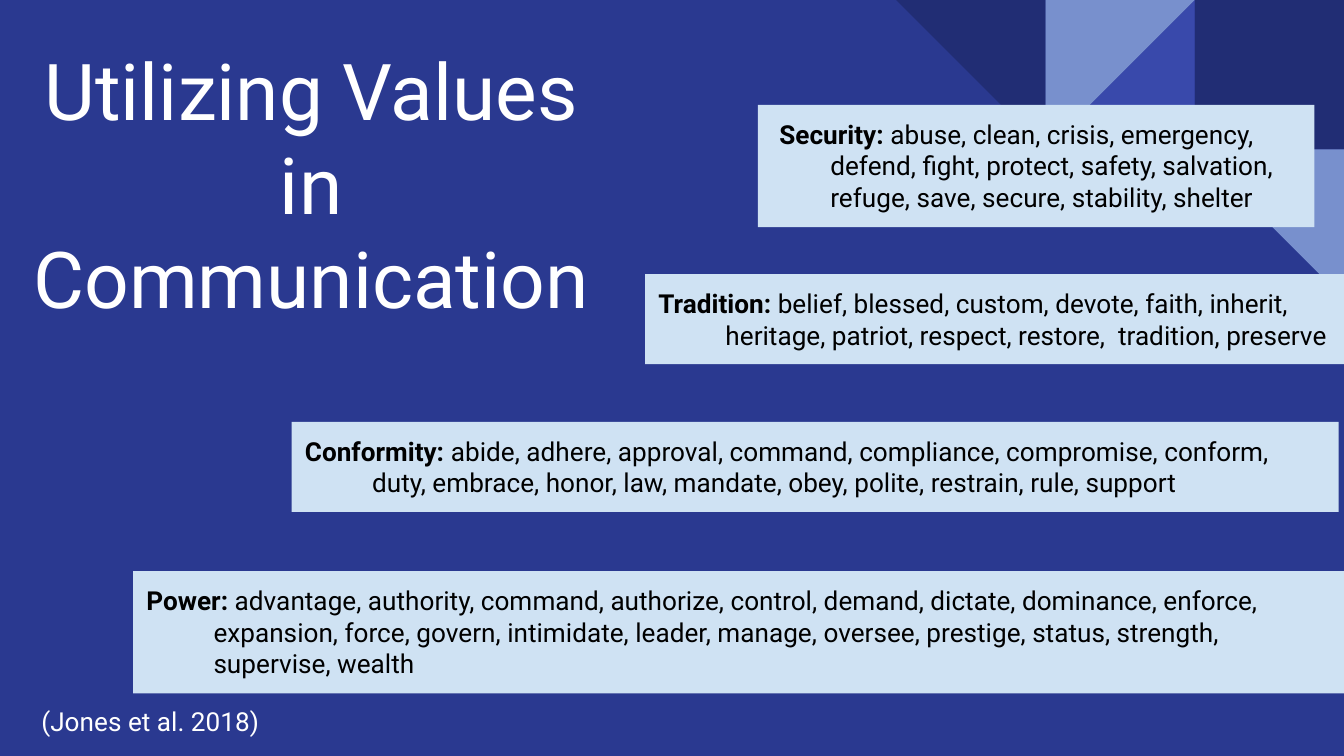
import dataclasses

import pptx
import pptx.dml.color
import pptx.enum.shapes
import pptx.enum.text
import pptx.oxml.ns
import pptx.util

Inches = pptx.util.Inches
SHAPE = pptx.enum.shapes.MSO_SHAPE
ANCHOR = pptx.enum.text.MSO_ANCHOR
ALIGN = pptx.enum.text.PP_ALIGN


@dataclasses.dataclass(frozen=True)
class Theme:
    font: str = "Roboto"
    title_size: int = 42
    body_size: int = 14
    background: str = "2A3990"
    navy: str = "212D74"
    indigo: str = "3949AB"
    periwinkle: str = "7890CD"
    panel: str = "CFE2F3"
    dark_text: str = "000000"
    light_text: str = "FFFFFF"


THEME = Theme()
SLIDE_WIDTH = 10
SLIDE_HEIGHT = SLIDE_WIDTH * 9 / 16
TILE = SLIDE_WIDTH / 9

CORNER_TILES = [
    (8, 0, SHAPE.RECTANGLE, 0, False, THEME.navy),
    (7, 0, SHAPE.RIGHT_TRIANGLE, 0, True, THEME.indigo),
    (7, 0, SHAPE.RIGHT_TRIANGLE, 180, True, THEME.periwinkle),
    (6, 0, SHAPE.RIGHT_TRIANGLE, 180, False, THEME.navy),
    (8, 1, SHAPE.RIGHT_TRIANGLE, 180, False, THEME.periwinkle),
]

VALUE_PANELS = [
    ((5.64, 0.78, 4.14, 0.91), 0.44, 0.38, "Security: ",
     "abuse, clean, crisis, emergency, defend, fight, protect, safety, "
     "salvation, refuge, save, secure, stability, shelter"),
    ((4.8, 2.04, 5.2, 0.67), 0.5, 0.5, "Tradition:",
     " belief, blessed, custom, devote, faith, inherit, heritage, patriot, "
     "respect, restore,  tradition, preserve"),
    ((2.17, 3.14, 7.79, 0.67), 0.5, 0.5, "Conformity: ",
     "abide, adhere, approval, command, compliance, compromise, conform, "
     "duty, embrace, honor, law, mandate, obey, polite, restrain, rule, support"),
    ((0.99, 4.25, 9.01, 0.91), 0.5, 0.5, "Power:",
     " advantage, authority, command, authorize, control, demand, dictate, "
     "dominance, enforce, expansion, force, govern, intimidate, leader, manage, "
     "oversee, prestige, status, strength, supervise, wealth"),
]


def rgb(value):
    return pptx.dml.color.RGBColor.from_string(value)


def add_block(slide, kind, box, color):
    block = slide.shapes.add_shape(kind, *map(Inches, box))
    block.shadow.inherit = False
    block.fill.solid()
    block.fill.fore_color.rgb = rgb(color)
    block.line.fill.background()
    return block


def prepare_frame(frame, anchor=ANCHOR.TOP):
    frame.word_wrap = True
    frame.auto_size = pptx.enum.text.MSO_AUTO_SIZE.NONE
    frame.vertical_anchor = anchor
    frame.margin_left = frame.margin_right = Inches(0.1)
    frame.margin_top = frame.margin_bottom = Inches(0.1)
    return frame.paragraphs[0]


def add_run(paragraph, text, size, color, bold=False):
    run = paragraph.add_run()
    run.text = text
    run.font.name = THEME.font
    run.font.size = pptx.util.Pt(size)
    run.font.bold = bold
    run.font.color.rgb = rgb(color)


def add_corner_tile(slide, column, row, kind, rotation, flipped, color):
    box = (column * TILE, row * TILE, TILE, TILE)
    tile = add_block(slide, kind, box, color)
    tile.rotation = rotation
    if flipped:
        tile.element.spPr.find(pptx.oxml.ns.qn("a:xfrm")).set("flipH", "1")


def add_value_panel(slide, box, indent, hanging, value, words):
    panel = add_block(slide, SHAPE.RECTANGLE, box, THEME.panel)
    paragraph = prepare_frame(panel.text_frame)
    paragraph.alignment = ALIGN.LEFT
    properties = paragraph._p.get_or_add_pPr()
    properties.set("marL", str(Inches(indent)))
    properties.set("indent", str(-Inches(hanging)))
    add_run(paragraph, value, THEME.body_size, THEME.dark_text, bold=True)
    add_run(paragraph, words, THEME.body_size, THEME.dark_text)


def set_title(slide, text):
    title = slide.shapes.title
    title.left, title.top = Inches(0.09), Inches(0.9)
    title.width, title.height = Inches(4.45), Inches(0.92)
    paragraph = prepare_frame(title.text_frame, ANCHOR.MIDDLE)
    paragraph.alignment = ALIGN.CENTER
    add_run(paragraph, text, THEME.title_size, THEME.light_text)


def add_citation(slide, text):
    citation = slide.shapes.add_textbox(*map(Inches, (0.21, 5.15, 2.6, 0.44)))
    paragraph = prepare_frame(citation.text_frame)
    add_run(paragraph, text, THEME.body_size, THEME.light_text)


def main():
    deck = pptx.Presentation()
    deck.slide_width, deck.slide_height = Inches(SLIDE_WIDTH), Inches(SLIDE_HEIGHT)
    slide = deck.slides.add_slide(deck.slide_layouts.get_by_name("Title Only"))
    slide.background.fill.solid()
    slide.background.fill.fore_color.rgb = rgb(THEME.background)

    for tile in CORNER_TILES:
        add_corner_tile(slide, *tile)
    for panel in VALUE_PANELS:
        add_value_panel(slide, *panel)
    set_title(slide, "Utilizing Values in Communication")
    add_citation(slide, "(Jones et al. 2018)")
    deck.save("out.pptx")


if __name__ == "__main__":
    main()
